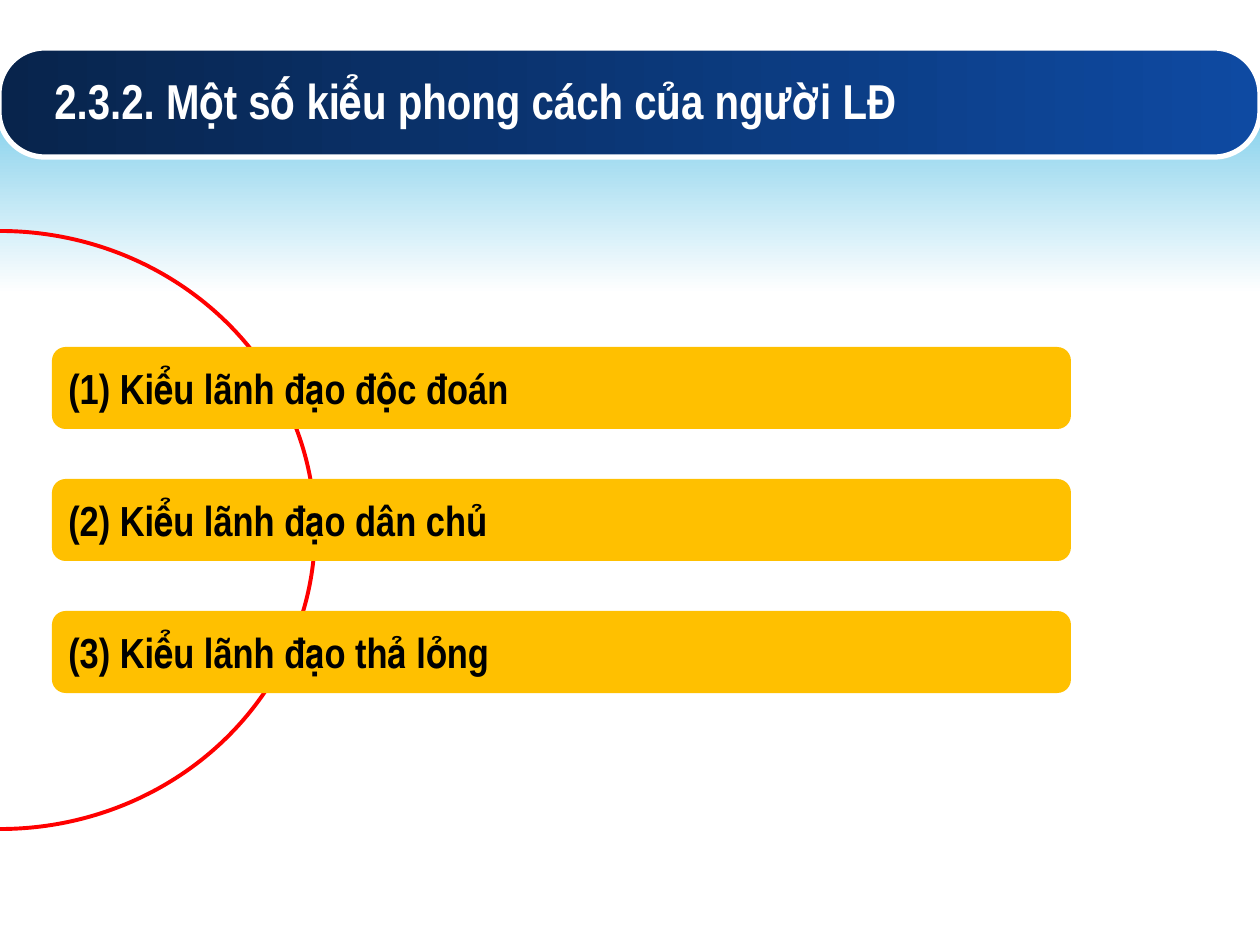
from dataclasses import dataclass

from pptx import Presentation
from pptx.dml.color import RGBColor
from pptx.enum.shapes import MSO_SHAPE
from pptx.enum.text import MSO_ANCHOR, PP_ALIGN
from pptx.util import Emu, Pt

RECTANGLE = MSO_SHAPE.RECTANGLE
ROUNDED = MSO_SHAPE.ROUNDED_RECTANGLE
OVAL = MSO_SHAPE.OVAL
MIDDLE = MSO_ANCHOR.MIDDLE
LEFT = PP_ALIGN.LEFT

PX_PER_INCH = 126
SLIDE_SIZE = (1260, 945)

TITLE = "2.3.2. Một số kiểu phong cách của người LĐ"
STYLES = [
    "(1) Kiểu lãnh đạo độc đoán",
    "(2) Kiểu lãnh đạo dân chủ",
    "(3) Kiểu lãnh đạo thả lỏng",
]
BAR_LEFT, BAR_TOP, BAR_WIDTH, BAR_HEIGHT = 52, 347, 1019, 82
BAR_PITCH = 132


@dataclass(frozen=True)
class Theme:
    font: str = "Arial Narrow"
    title_size: int = 28
    bar_size: int = 24
    white: str = "FFFFFF"
    black: str = "000000"
    sky: str = "81CFEB"
    navy: str = "08244C"
    blue: str = "0E4AA2"
    amber: str = "FFC000"
    red: str = "FF0000"


THEME = Theme()


def px(length):
    return Emu(round(length * 914400 / PX_PER_INCH))


def rgb(value):
    return RGBColor.from_string(value)


def add_panel(slide, kind, box, fill=None, line=None, line_width=1):
    panel = slide.shapes.add_shape(kind, *map(px, box))
    panel.shadow.inherit = False
    if fill:
        panel.fill.solid()
        panel.fill.fore_color.rgb = rgb(fill)
    else:
        panel.fill.background()
    if line:
        panel.line.color.rgb = rgb(line)
        panel.line.width = Pt(line_width)
    else:
        panel.line.fill.background()
    return panel


def set_gradient(panel, start, end, angle):
    """Blend two colours; the angle runs counter-clockwise from left to right."""
    panel.fill.gradient()
    panel.fill.gradient_angle = angle
    for stop, color in zip(panel.fill.gradient_stops, (start, end)):
        stop.color.rgb = rgb(color)


def write_text(holder, text, *, size, color, bold=True):
    frame = holder.text_frame
    frame.word_wrap = True
    frame.vertical_anchor = MIDDLE
    paragraph = frame.paragraphs[0]
    paragraph.alignment = LEFT
    run = paragraph.add_run()
    run.text = text
    run.font.name = THEME.font
    run.font.size = Pt(size)
    run.font.bold = bold
    run.font.color.rgb = rgb(color)


def add_header(slide):
    glow = add_panel(slide, RECTANGLE, (0, 106, 1260, 188))
    set_gradient(glow, THEME.sky, THEME.white, 270)
    banner = add_panel(slide, ROUNDED, (-1, 48, 1261, 109),
                       line=THEME.white, line_width=3)
    banner.adjustments[0] = 0.42
    set_gradient(banner, THEME.navy, THEME.blue, 0)
    title = slide.shapes.add_textbox(*map(px, (42, 52, 1197, 96)))
    write_text(title, TITLE, size=THEME.title_size, color=THEME.white)


def add_style_bars(slide):
    for index, style in enumerate(STYLES):
        top = BAR_TOP + index * BAR_PITCH
        bar = add_panel(slide, ROUNDED, (BAR_LEFT, top, BAR_WIDTH, BAR_HEIGHT),
                        fill=THEME.amber)
        write_text(bar, style, size=THEME.bar_size, color=THEME.black)


def main():
    deck = Presentation()
    deck.slide_width, deck.slide_height = map(px, SLIDE_SIZE)
    slide = deck.slides.add_slide(deck.slide_layouts[6])
    add_header(slide)
    add_panel(slide, OVAL, (-315, 231, 630, 598), line=THEME.red, line_width=2.25)
    add_style_bars(slide)
    deck.save("out.pptx")


if __name__ == "__main__":
    main()
